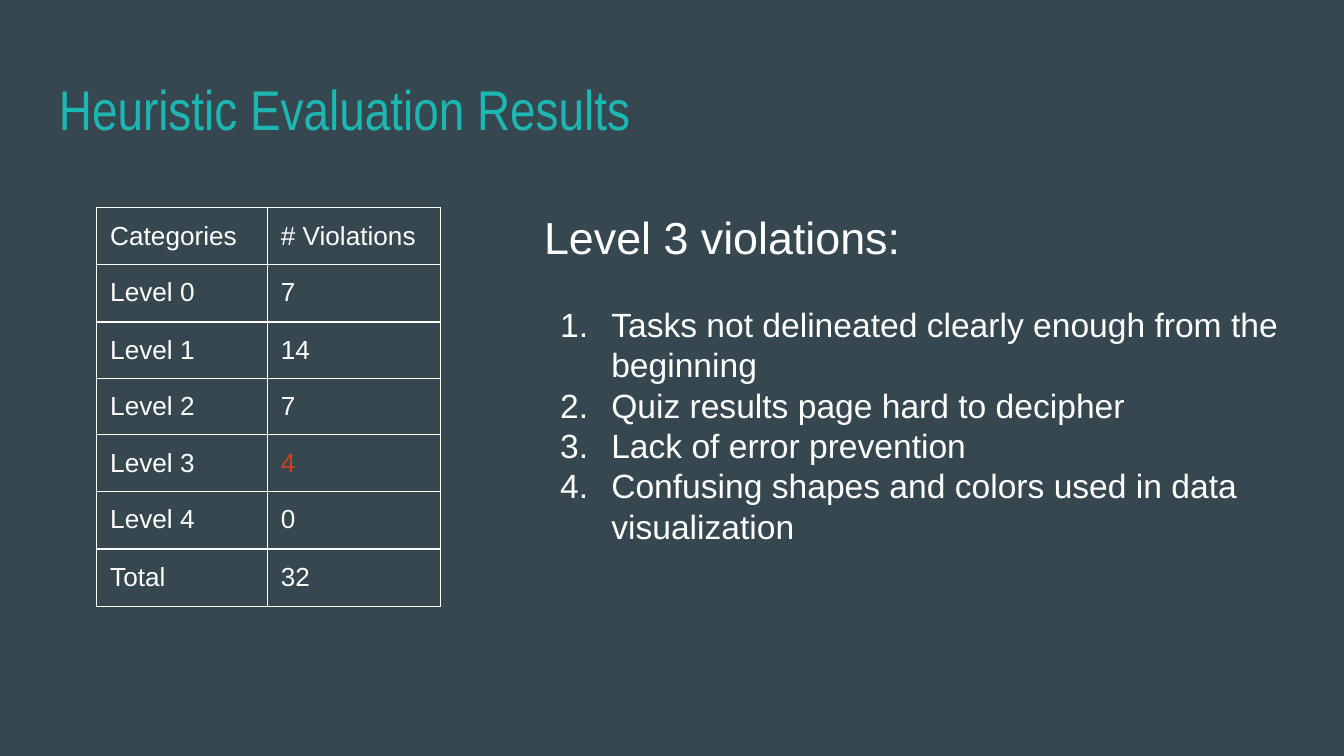
from lxml.etree import SubElement
from pptx import Presentation
from pptx.dml.color import RGBColor
from pptx.enum.text import MSO_ANCHOR
from pptx.oxml.ns import qn
from pptx.util import Inches, Pt

SLATE = RGBColor(0x37, 0x47, 0x4F)
TEAL = RGBColor(0x1D, 0xB7, 0xB3)
WHITE = RGBColor(0xFF, 0xFF, 0xFF)
RED = RGBColor(0xCC, 0x41, 0x25)
INSET = Inches(0.1)
MARGINS = {f"margin_{side}": INSET for side in ("left", "top", "right", "bottom")}


def set_all(target, values):
    for name, value in values.items():
        setattr(target, name, value)


def write(paragraph, text, size, color=WHITE, face="Arial"):
    run = paragraph.add_run()
    run.text = text
    set_all(run.font, {"size": Pt(size), "name": face, "bold": False})
    run.font.color.rgb = color


deck = Presentation()
deck.slide_width, deck.slide_height = Inches(10), Inches(10 * 9 / 16)
W, H = deck.slide_width, deck.slide_height
slide = deck.slides.add_slide(deck.slide_layouts[6])
slide.background.fill.solid()
slide.background.fill.fore_color.rgb = SLATE

# Title
title = slide.shapes.add_textbox(
    int(0.034 * W), int(0.087 * H), int(0.932 * W), int(0.112 * H)).text_frame
set_all(title, {"word_wrap": True, "vertical_anchor": MSO_ANCHOR.MIDDLE, **MARGINS})
write(title.paragraphs[0], "Heuristic Evaluation Results", 30, TEAL, "Arial Narrow")

# Violations per category
counts = [("Categories", "# Violations"), ("Level 0", "7"), ("Level 1", "14"),
          ("Level 2", "7"), ("Level 3", "4"), ("Level 4", "0"), ("Total", "32")]
tall_rows = ("Level 0", "Level 4", "Total")
column_widths = [Inches(1.27), Inches(1.29)]
row_heights = [Inches(0.43 if row[0] in tall_rows else 0.42) for row in counts]
violations = slide.shapes.add_table(
    len(counts), 2, int(0.072 * W), int(0.275 * H),
    sum(column_widths), sum(row_heights)).table
set_all(violations, {"first_row": False, "horz_banding": False})
for column, width in zip(violations.columns, column_widths):
    column.width = width

for r, row in enumerate(counts):
    violations.rows[r].height = row_heights[r]
    for c, text in enumerate(row):
        cell = violations.cell(r, c)
        set_all(cell, {**MARGINS, "margin_bottom": Inches(0.08)})
        highlighted = row[0] == "Level 3" and c == 1
        write(cell.text_frame.paragraphs[0], text, 14, RED if highlighted else WHITE)
        properties = cell._tc.get_or_add_tcPr()
        for edge in ("a:lnL", "a:lnR", "a:lnT", "a:lnB"):
            border = SubElement(properties, qn(edge), w=str(Pt(0.75)))
            paint = SubElement(border, qn("a:solidFill"))
            SubElement(paint, qn("a:srgbClr"), val=str(WHITE))
        cell.fill.background()

# Level 3 findings
findings = slide.shapes.add_textbox(
    int(0.395 * W), int(0.26 * H), int(0.625 * W), int(0.203 * H)).text_frame
set_all(findings, {"word_wrap": True, **MARGINS})
write(findings.paragraphs[0], "Level 3 violations:", 24)

problems = ["Tasks not delineated clearly enough from the beginning",
            "Quiz results page hard to decipher",
            "Lack of error prevention",
            "Confusing shapes and colors used in data visualization"]
for i, problem in enumerate(problems):
    item = findings.add_paragraph()
    item.space_before = Pt(0 if i else 21.6)
    properties = item._p.get_or_add_pPr()
    properties.set("marL", str(Inches(0.5)))
    properties.set("indent", str(Inches(-0.38)))
    bullet_color = SubElement(properties, qn("a:buClr"))
    SubElement(bullet_color, qn("a:srgbClr"), val=str(WHITE))
    SubElement(properties, qn("a:buFont"), typeface="Arial")
    SubElement(properties, qn("a:buAutoNum"), type="arabicPeriod")
    write(item, problem, 18)

deck.save("out.pptx")
